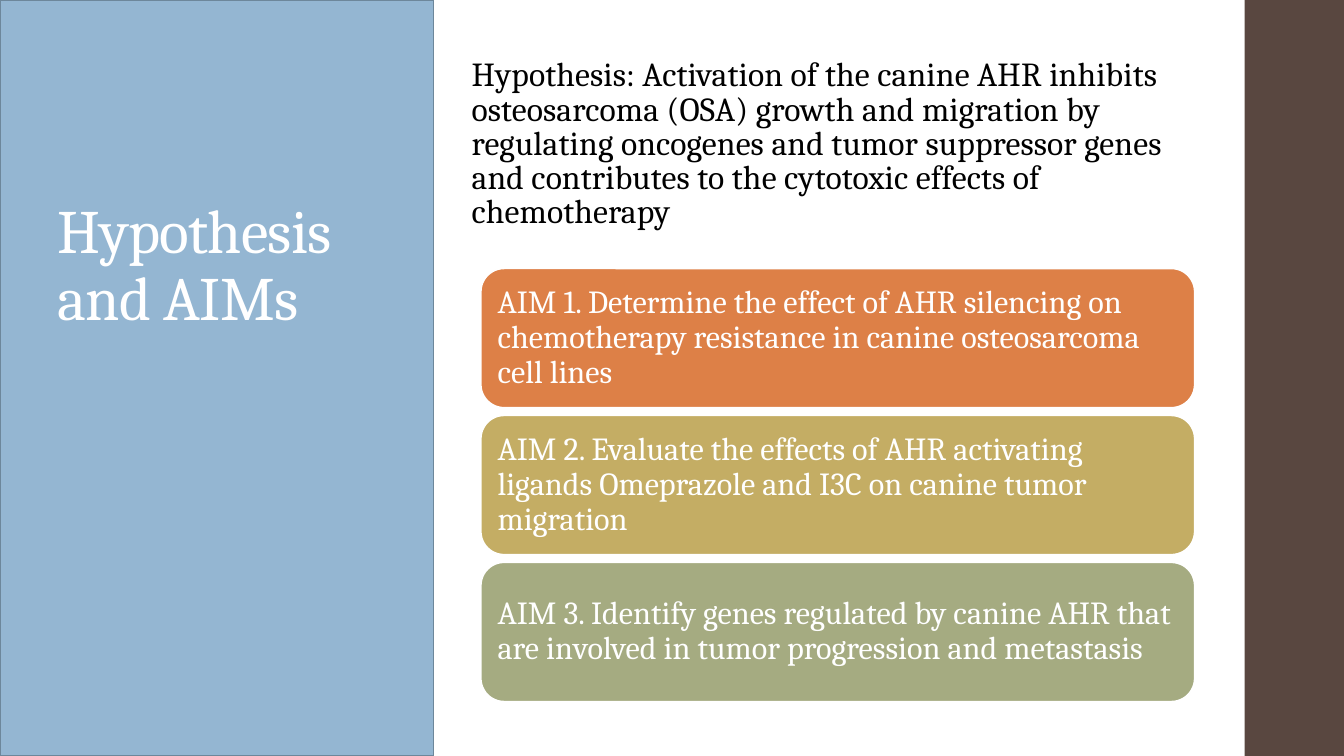
from pptx import Presentation
from pptx.dml.color import RGBColor
from pptx.enum.shapes import MSO_SHAPE
from pptx.enum.text import MSO_ANCHOR, PP_ALIGN
from pptx.util import Pt

WHITE = RGBColor(0xFF, 0xFF, 0xFF)
BLACK = RGBColor(0x00, 0x00, 0x00)
BROWN = RGBColor(0x59, 0x47, 0x40)
BLUE = RGBColor(0x94, 0xB6, 0xD2)
SLATE = RGBColor(0x6D, 0x87, 0x9B)
ORANGE = RGBColor(0xDD, 0x80, 0x47)
GOLD = RGBColor(0xC4, 0xAD, 0x64)
GREEN = RGBColor(0xA5, 0xAB, 0x81)

WIDTH, HEIGHT = 960, 540
AIM_TOP, AIM_HEIGHT, AIM_STEP = 191.8, 99.4, 104.95
AIMS = [
    ("AIM 1. Determine the effect of AHR silencing on chemotherapy "
     "resistance in canine osteosarcoma cell lines", ORANGE),
    ("AIM 2. Evaluate the effects of AHR activating ligands Omeprazole "
     "and I3C on canine tumor migration", GOLD),
    ("AIM 3. Identify genes regulated by canine AHR that are involved in "
     "tumor progression and metastasis", GREEN),
]


class SlideBuilder:
    font = "Cambria"
    line_width = 1.1

    def __init__(self, s):
        self.s = s

    def shape(self, kind, x, y, w, h, fill, line=None):
        sp = self.s.shapes.add_shape(kind, Pt(x), Pt(y), Pt(w), Pt(h))
        sp.shadow.inherit = False
        sp.fill.solid()
        sp.fill.fore_color.rgb = fill
        if line is None:
            sp.line.fill.background()
        else:
            sp.line.color.rgb = line
            sp.line.width = Pt(self.line_width)
        return sp

    def set_text(self, sp, text, size, color, anchor, line_spacing, tracking=0):
        tf = sp.text_frame
        tf.text = text
        tf.word_wrap = True
        tf.vertical_anchor = anchor
        p = tf.paragraphs[0]
        p.alignment = PP_ALIGN.LEFT
        p.line_spacing = line_spacing
        r = p.runs[0]
        r.font.name = self.font
        r.font.size = Pt(size)
        r.font.color.rgb = color
        if tracking:
            # Letter spacing in hundredths of a point
            r._r.get_or_add_rPr().set("spc", str(tracking))

    def text(self, x, y, w, h, *style):
        sp = self.s.shapes.add_textbox(Pt(x), Pt(y), Pt(w), Pt(h))
        self.set_text(sp, *style)

    def card(self, x, y, w, h, text, fill):
        sp = self.shape(MSO_SHAPE.ROUNDED_RECTANGLE, x, y, w, h, fill, WHITE)
        self.set_text(sp, text, 23, WHITE, MSO_ANCHOR.MIDDLE, 0.9)
        tf = sp.text_frame
        tf.margin_left = tf.margin_right = Pt(7.2)
        tf.margin_top = tf.margin_bottom = Pt(7.2)


def main():
    prs = Presentation()
    prs.slide_width, prs.slide_height = Pt(WIDTH), Pt(HEIGHT)
    s = prs.slides.add_slide(prs.slide_layouts[6])
    builder = SlideBuilder(s)

    # Side bands
    builder.shape(MSO_SHAPE.RECTANGLE, 889, 0, WIDTH - 889, HEIGHT, BROWN)
    builder.shape(MSO_SHAPE.RECTANGLE, 0, 0, 309.6, HEIGHT, BLUE, SLATE)

    # Title and hypothesis
    builder.text(33.8, 128.9, 262.8, 113, "Hypothesis and AIMs",
                 44, WHITE, MSO_ANCHOR.BOTTOM, 0.9, -50)
    builder.text(329.8, 38.9, 540, 133.2,
                 "Hypothesis: Activation of the canine AHR inhibits osteosarcoma "
                 "(OSA) growth and migration by regulating oncogenes and tumor "
                 "suppressor genes and contributes to the cytotoxic effects of "
                 "chemotherapy",
                 24, BLACK, MSO_ANCHOR.TOP, 0.85, 10)

    # Aims
    for i, (text, fill) in enumerate(AIMS):
        builder.card(343.5, AIM_TOP + i * AIM_STEP, 509.8, AIM_HEIGHT, text, fill)

    prs.save("out.pptx")


if __name__ == "__main__":
    main()
